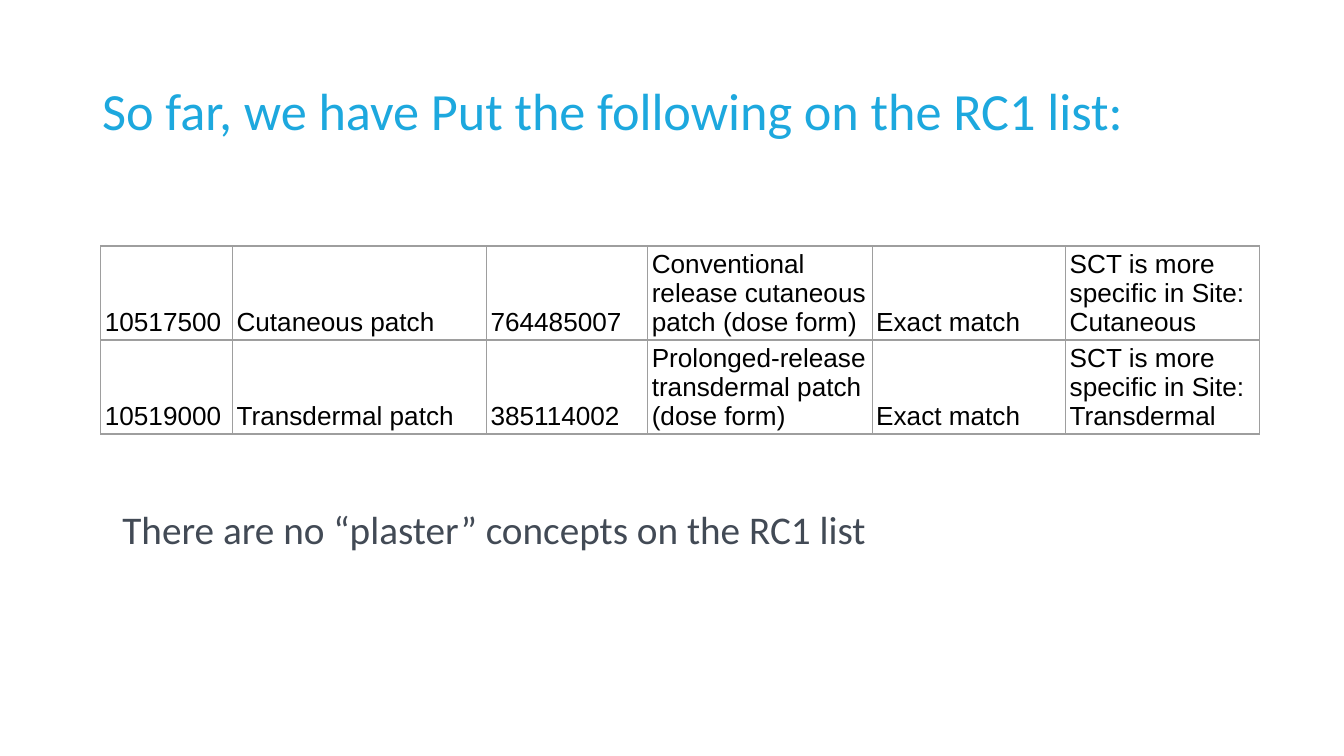
from lxml.etree import SubElement
from pptx import Presentation
from pptx.dml.color import RGBColor
from pptx.enum.text import MSO_ANCHOR, PP_ALIGN
from pptx.oxml.ns import qn
from pptx.util import Inches, Pt

TITLE = "So far, we have Put the following on the RC1 list:"
CONCEPTS = [
    ("10517500", "Cutaneous patch", "764485007",
     "Conventional release cutaneous patch (dose form)", "Exact match",
     "SCT is more specific in Site: Cutaneous"),
    ("10519000", "Transdermal patch", "385114002",
     "Prolonged-release transdermal patch (dose form)", "Exact match",
     "SCT is more specific in Site: Transdermal"),
]
REMARK = "There are no “plaster” concepts on the RC1 list"

SLIDE_WIDTH = 10
SLIDE_HEIGHT = SLIDE_WIDTH * 9 / 16
MARGIN = 0.69
CONTENT_WIDTH = SLIDE_WIDTH - 2 * MARGIN
COLUMN_WIDTHS = (0.98, 1.89, 1.2, 1.67, 1.44, 1.44)
ROW_HEIGHT = 0.7


def color(hex_value):
    return RGBColor.from_string(hex_value)


def set_margins(area, side, edge):
    area.margin_left = area.margin_right = Inches(side)
    area.margin_top = area.margin_bottom = Inches(edge)


def format_text(frame, font_name, size, hex_value, line_spacing=None):
    paragraph = frame.paragraphs[0]
    paragraph.alignment = PP_ALIGN.LEFT
    paragraph.line_spacing = line_spacing
    font = paragraph.runs[0].font
    font.name, font.size = font_name, Pt(size)
    font.color.rgb = color(hex_value)


def place_text(holder, text, top, height, anchor, size, hex_value):
    holder.left, holder.top = Inches(MARGIN), Inches(top)
    holder.width, holder.height = Inches(CONTENT_WIDTH), Inches(height)
    frame = holder.text_frame
    frame.text = text
    frame.word_wrap = True
    frame.vertical_anchor = anchor
    set_margins(frame, 0.07, 0.04)
    format_text(frame, "Calibri", size, hex_value, 0.9)
    return frame


def add_borders(cell, hex_value, width):
    properties = cell._tc.get_or_add_tcPr()
    for position, side in enumerate(("a:lnL", "a:lnR", "a:lnT", "a:lnB")):
        border = SubElement(properties, qn(side), w=str(Pt(width)))
        fill = SubElement(border, qn("a:solidFill"))
        SubElement(fill, qn("a:srgbClr"), val=hex_value)
        properties.insert(position, border)


def add_concepts(slide):
    table = slide.shapes.add_table(
        len(CONCEPTS), len(COLUMN_WIDTHS), Inches(0.75), Inches(1.83),
        Inches(sum(COLUMN_WIDTHS)), Inches(ROW_HEIGHT * len(CONCEPTS))).table
    table.first_row = table.horz_banding = False
    for column, width in zip(table.columns, COLUMN_WIDTHS):
        column.width = Inches(width)
    for row, concept in zip(table.rows, CONCEPTS):
        row.height = Inches(ROW_HEIGHT)
        for cell, value in zip(row.cells, concept):
            cell.text_frame.text = value
            cell.vertical_anchor = MSO_ANCHOR.BOTTOM
            set_margins(cell, 0.03, 0.02)
            format_text(cell.text_frame, "Arial", 14, "000000")
            cell.fill.background()
            add_borders(cell, "9E9E9E", 0.75)


def main():
    deck = Presentation()
    deck.slide_width, deck.slide_height = Inches(SLIDE_WIDTH), Inches(SLIDE_HEIGHT)
    slide = deck.slides.add_slide(deck.slide_layouts[5])
    place_text(slide.shapes.title, TITLE, 0.3, 1.09, MSO_ANCHOR.MIDDLE, 28, "1DA8DE")
    add_concepts(slide)
    remark = place_text(slide.shapes.add_textbox(0, 0, 0, 0), REMARK, 3.76, 0.53,
                        MSO_ANCHOR.TOP, 21, "424A55")
    indent = remark.paragraphs[0]._p.get_or_add_pPr()
    indent.set("marL", str(Inches(0.15)))
    indent.set("indent", "0")
    deck.save("out.pptx")


if __name__ == "__main__":
    main()
